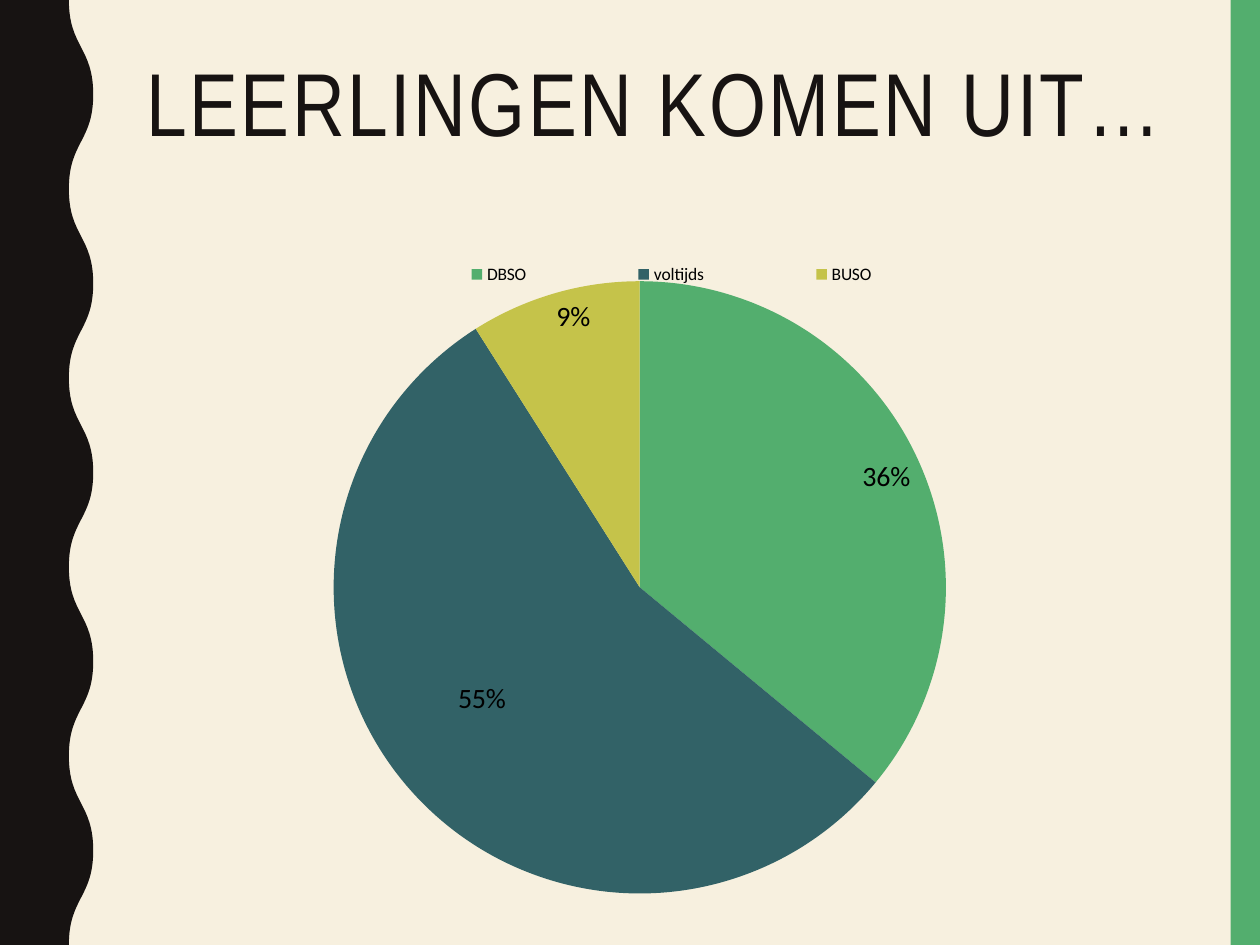
from lxml.etree import fromstring
from pptx import Presentation
from pptx.chart.data import CategoryChartData
from pptx.dml.color import RGBColor
from pptx.enum.chart import XL_CHART_TYPE as ChartType
from pptx.enum.chart import XL_LABEL_POSITION as LabelPos
from pptx.enum.chart import XL_LEGEND_POSITION as LegendPos
from pptx.enum.shapes import MSO_SHAPE as Shape
from pptx.enum.text import MSO_ANCHOR as Anchor
from pptx.enum.text import PP_ALIGN as Align
from pptx.oxml.ns import nsdecls
from pptx.util import Cm, Pt

# Content
TITLE = "LEERLINGEN KOMEN UIT… "
CREAM = RGBColor(0xF7, 0xF0, 0xDF)
INK = RGBColor(0x17, 0x13, 0x12)
BLACK = RGBColor(0, 0, 0)
GREEN = RGBColor(0x53, 0xAE, 0x6E)
TEAL = RGBColor(0x32, 0x62, 0x67)
OLIVE = RGBColor(0xC5, 0xC3, 0x4A)
ORIGINS = [("DBSO", 36, GREEN), ("voltijds", 55, TEAL), ("BUSO", 9, OLIVE)]

# Geometry in centimetres
WIDTH, HEIGHT = 25.4, 19.05
BAR_W = 0.59
WAVE_IN, WAVE_OUT = 1.39, 1.88
HALF_WAVES = 10


def paint(shape, color):
    shape.shadow.inherit = False
    shape.fill.solid()
    shape.fill.fore_color.rgb = color
    shape.line.fill.background()


def curve(line, start, end):
    """Turn a straight path segment into an S-curve with vertical ends."""
    (x1, y1), (x2, y2) = start, end
    middle = (y1 + y2) // 2
    points = "".join(f'<a:pt x="{x}" y="{y}"/>'
                     for x, y in [(x1, middle), (x2, middle), (x2, y2)])
    bezier = fromstring(f'<a:cubicBezTo {nsdecls("a")}>{points}</a:cubicBezTo>')
    line.getparent().replace(line, bezier)


def layout(x, y, w=None, h=None, inner=False):
    """Manual chart layout, in fractions of the chart."""
    parts = [("layoutTarget", "inner")] if inner else []
    if w:
        parts += [("xMode", "edge"), ("yMode", "edge")]
    parts += [("x", x), ("y", y)]
    if w:
        parts += [("w", w), ("h", h)]
    body = "".join(f'<c:{tag} val="{val}"/>' for tag, val in parts)
    return fromstring(f'<c:layout {nsdecls("c")}><c:manualLayout>{body}'
                      '</c:manualLayout></c:layout>')


prs = Presentation()
prs.slide_width, prs.slide_height = Cm(WIDTH), Cm(HEIGHT)
s = prs.slides.add_slide(prs.slide_layouts[5])
s.background.fill.solid()
s.background.fill.fore_color.rgb = CREAM

# Side bands
bar = s.shapes.add_shape(Shape.RECTANGLE, Cm(WIDTH - BAR_W), 0, Cm(BAR_W), Cm(HEIGHT))
paint(bar, GREEN)
edge = [(Cm((WAVE_IN, WAVE_OUT)[i % 2]), Cm(HEIGHT * i / HALF_WAVES))
        for i in range(HALF_WAVES + 1)]
builder = s.shapes.build_freeform(0, 0)
builder.add_line_segments([*edge, (0, Cm(HEIGHT))])
wave = builder.convert_to_shape()
paint(wave, INK)
lines = list(wave._element.iter("{*}lnTo"))
for line, start, end in zip(lines[1:], edge, edge[1:]):
    curve(line, start, end)

# Title
title = s.shapes.title
title.left, title.top, title.width, title.height = Cm(2.62), Cm(1.07), Cm(21.2), Cm(4.14)
tf = title.text_frame
tf.text = TITLE
tf.word_wrap = True
tf.vertical_anchor = Anchor.TOP
p = tf.paragraphs[0]
p.alignment = Align.CENTER
p.line_spacing = 0.9
p.font.name, p.font.size = "Arial Narrow", Pt(51)
p.font.color.rgb = INK
p.runs[0].font._element.set("spc", "150")

# Pie chart
data = CategoryChartData()
data.categories = [name for name, _, _ in ORIGINS]
data.add_series("Series 1", [value for _, value, _ in ORIGINS])
chart = s.shapes.add_chart(ChartType.PIE, Cm(2.03), Cm(4.56), Cm(21.31), Cm(13.87), data).chart
chart.has_title = False
chart.font.name, chart.font.size = "Calibri", Pt(10)
chart.font.color.rgb = BLACK
plot = chart.plots[0]
plot.vary_by_categories = True
series = plot.series[0]
for i, (_, _, color) in enumerate(ORIGINS):
    fill = series.points[i].format.fill
    fill.solid()
    fill.fore_color.rgb = color

plot_area = chart._chartSpace.chart.plotArea
for old in plot_area.findall("{*}layout"):
    plot_area.remove(old)
plot_area.insert(0, layout(0.22, 0.08, 0.58, 0.89, inner=True))

# Legend
chart.has_legend = True
legend = chart.legend
legend.position = LegendPos.TOP
legend.include_in_layout = False
legend_xml = legend._element
for old in legend_xml.findall("{*}layout"):
    legend_xml.remove(old)
legend_xml.find("{*}legendPos").addnext(layout(0.25, 0.05, 0.58, 0.04))

# Percentages, the middle one pulled towards the centre
labels = series.data_labels
labels.show_percentage, labels.show_value = True, False
labels.number_format, labels.number_format_is_linked = "0%", False
label = series.points[1].data_label
for item in (labels, label):
    item.position = LabelPos.INSIDE_END
    item.font.name, item.font.size = "Calibri", Pt(16)
    item.font.color.rgb = BLACK
label_xml = labels._element.find("{*}dLbl")
label_xml.find("{*}showVal").set("val", "0")
label_xml.find("{*}showPercent").set("val", "1")
label_xml.find("{*}idx").addnext(layout(0.04, -0.1))

prs.save("out.pptx")
